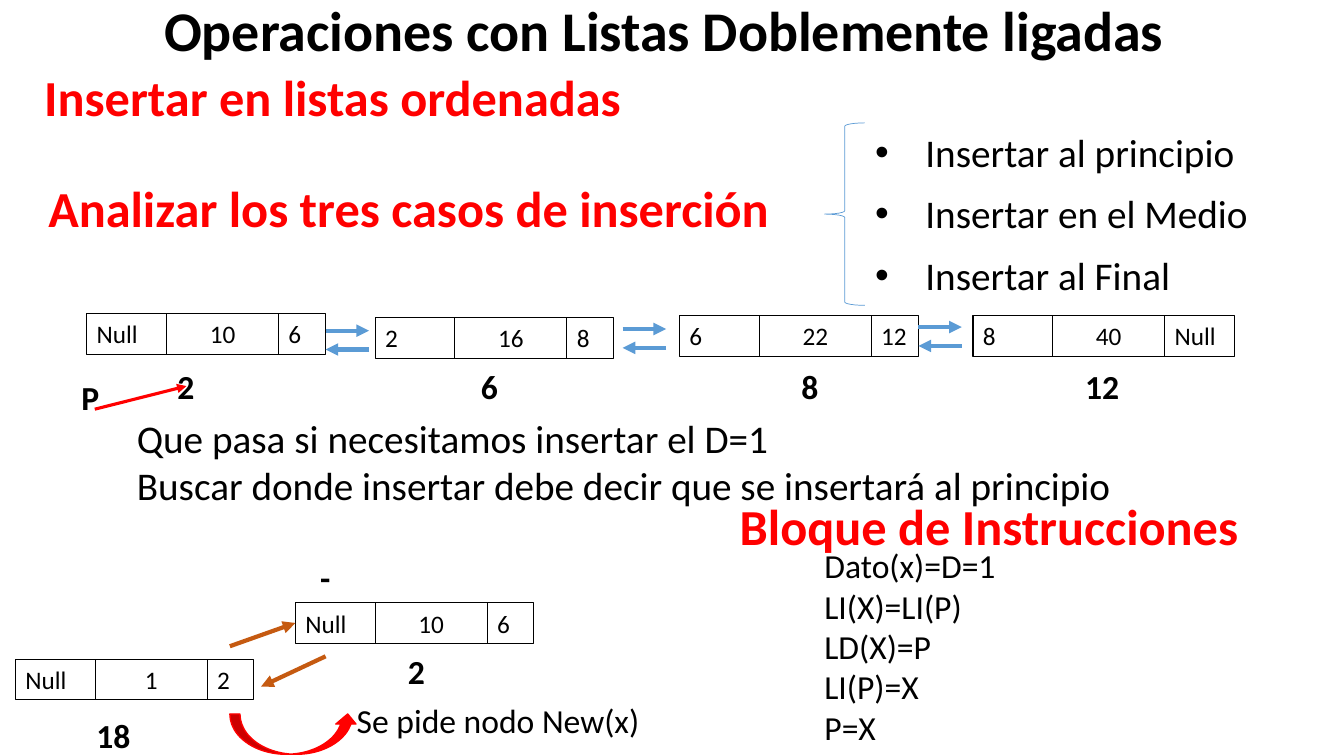
import lxml.etree
import pptx
import pptx.dml.color
import pptx.enum.shapes
import pptx.enum.text
import pptx.oxml.ns
import pptx.util

Pt = pptx.util.Pt
SHAPE = pptx.enum.shapes.MSO_SHAPE
ALIGN = pptx.enum.text.PP_ALIGN
BLACK, RED, BLUE, BROWN = "000000", "FF0000", "5B9BD5", "C55A11"


def color(code):
    return pptx.dml.color.RGBColor.from_string(code)


def write(frame, lines, size, tint=BLACK, bold=False, align=ALIGN.LEFT, gap=0):
    frame.word_wrap = True
    frame.auto_size = pptx.enum.text.MSO_AUTO_SIZE.NONE
    frame.vertical_anchor = pptx.enum.text.MSO_ANCHOR.TOP
    for index, line in enumerate(lines):
        para = frame.paragraphs[0] if index == 0 else frame.add_paragraph()
        para.alignment = align
        para.space_before = Pt(gap if index else 0)
        run = para.add_run()
        run.text = line
        run.font.name = "Calibri"
        run.font.size = Pt(size)
        run.font.bold = bold
        run.font.color.rgb = color(tint)


def place(shape, box):
    shape.left, shape.top, shape.width, shape.height = map(Pt, box)


def note(slide, box, lines, size, **style):
    text = slide.shapes.add_textbox(*map(Pt, box))
    write(text.text_frame, lines, size, **style)


def label(slide, x, y, text):
    note(slide, (x, y, 51, 36), [text], 24, bold=True, align=ALIGN.CENTER)


def outline(slide, kind, box, tint, width):
    shape = slide.shapes.add_shape(kind, *map(Pt, box))
    shape.shadow.inherit = False
    shape.fill.background()
    shape.line.color.rgb = color(tint)
    shape.line.width = Pt(width)
    return shape


def arrow(slide, start, end, tint, width=3):
    line = slide.shapes.add_connector(
        pptx.enum.shapes.MSO_CONNECTOR.STRAIGHT, *map(Pt, start + end))
    line.line.color.rgb = color(tint)
    line.line.width = Pt(width)
    qn = pptx.oxml.ns.qn
    props = line._element.spPr
    tip = lxml.etree.SubElement(props.find(qn("a:ln")), qn("a:tailEnd"))
    tip.set("type", "triangle")
    lxml.etree.SubElement(props, qn("a:effectLst"))


def node(slide, x, y, values, name, shift, drop, last=33.4):
    left = x
    aligns = (ALIGN.LEFT, ALIGN.CENTER, ALIGN.LEFT)
    for value, width, align in zip(values, (57, 80, last), aligns):
        cell = outline(slide, SHAPE.RECTANGLE, (left, y, width, 29), BLACK, 0.75)
        write(cell.text_frame, [value], 18, align=align)
        left += width
    label(slide, x + shift, y + drop, name)


def link(slide, x, y):
    arrow(slide, (x, y), (x + 31, y), BLUE)
    arrow(slide, (x + 31, y + 13.5), (x, y + 13.5), BLUE)


def header(slide, x, y):
    title = slide.shapes.title
    place(title, (x, y, 788, 55.5))
    write(title.text_frame, ["Operaciones con Listas Doblemente ligadas"], 40, bold=True)
    note(slide, (x - 85.5, y + 50.5, 481, 51), ["Insertar en listas ordenadas"],
         36, tint=RED, bold=True)


def cases(slide, x, y):
    note(slide, (x, y + 35.3, 722, 51), ["Analizar los tres casos de inserción"],
         36, tint=RED, bold=True)
    outline(slide, SHAPE.LEFT_BRACE, (x + 561.6, y, 28.8, 130.3), BLUE, 0.5)
    body = slide.placeholders[1]
    place(body, (x + 590.4, y, 317, 131))
    lines = ["Insertar al principio", "Insertar en el Medio", "Insertar al Final"]
    write(body.text_frame, lines, 28, gap=10.5)
    for para in body.text_frame.paragraphs:
        props = para._p.get_or_add_pPr()
        props.set("marL", str(Pt(36)))
        props.set("indent", str(-Pt(36)))


def chain(slide, x, y):
    node(slide, x, y, ("Null", "10", "6"), "2", 45.3, 33.8)
    node(slide, x + 206, y + 2.8, ("2", "16", "8"), "6", 56, 31)
    node(slide, x + 423.4, y + 1.4, ("6", "22", "12"), "8", 67.6, 32.4)
    node(slide, x + 633, y + 1.4, ("8", "40", "Null"), "12", 66.8, 32.4, 49.7)
    for dx, dy in ((170.6, 12.2), (382.8, 11), (594, 9.6)):
        link(slide, x + dx, y + dy)
    label(slide, x - 23, y + 41.7, "P")
    arrow(slide, (x + 5.7, y + 68.3), (x + 71.2, y + 51.8), RED, 2.25)


def insert(slide, x, y):
    label(slide, x + 195.8, y - 77, "-")
    node(slide, x + 200, y - 40.3, ("Null", "10", "6"), "2", 61, 31)
    node(slide, x, y, ("Null", "1", "2"), "18", 44.5, 36)
    arrow(slide, (x + 153.2, y - 9.4), (x + 200, y - 26), BROWN)
    arrow(slide, (x + 221.6, y - 2.2), (x + 175.5, y + 19.4), BROWN)
    note(slide, (x + 236.7, y + 25.2, 265, 36), ["Se pide nodo New(x)"], 24)
    curve = outline(slide, SHAPE.CURVED_UP_ARROW, (x + 153.2, y + 39, 91.4, 28.8), RED, 1)
    curve.fill.solid()
    curve.fill.fore_color.rgb = color(RED)


def block(slide, x, y):
    note(slide, (x, y, 481, 51), ["Bloque de Instrucciones"], 36, tint=RED, bold=True)
    lines = ["Dato(x)=D=1", "LI(X)=LI(P)", "LD(X)=P", "LI(P)=X", "P=X"]
    note(slide, (x + 60.5, y + 36, 144, 152.6), lines, 24)


def main():
    deck = pptx.Presentation()
    deck.slide_width, deck.slide_height = Pt(960), Pt(540)
    slide = deck.slides.add_slide(deck.slide_layouts[1])
    header(slide, 110, -6.5)
    cases(slide, 27.4, 87.8)
    chain(slide, 62, 224)
    note(slide, (90.7, 292.3, 809, 75),
         ["Que pasa si necesitamos insertar el D=1",
          "Buscar donde insertar debe decir que se insertará al principio"], 28)
    insert(slide, 11, 471)
    block(slide, 521.3, 350)
    deck.save("out.pptx")


if __name__ == "__main__":
    main()
